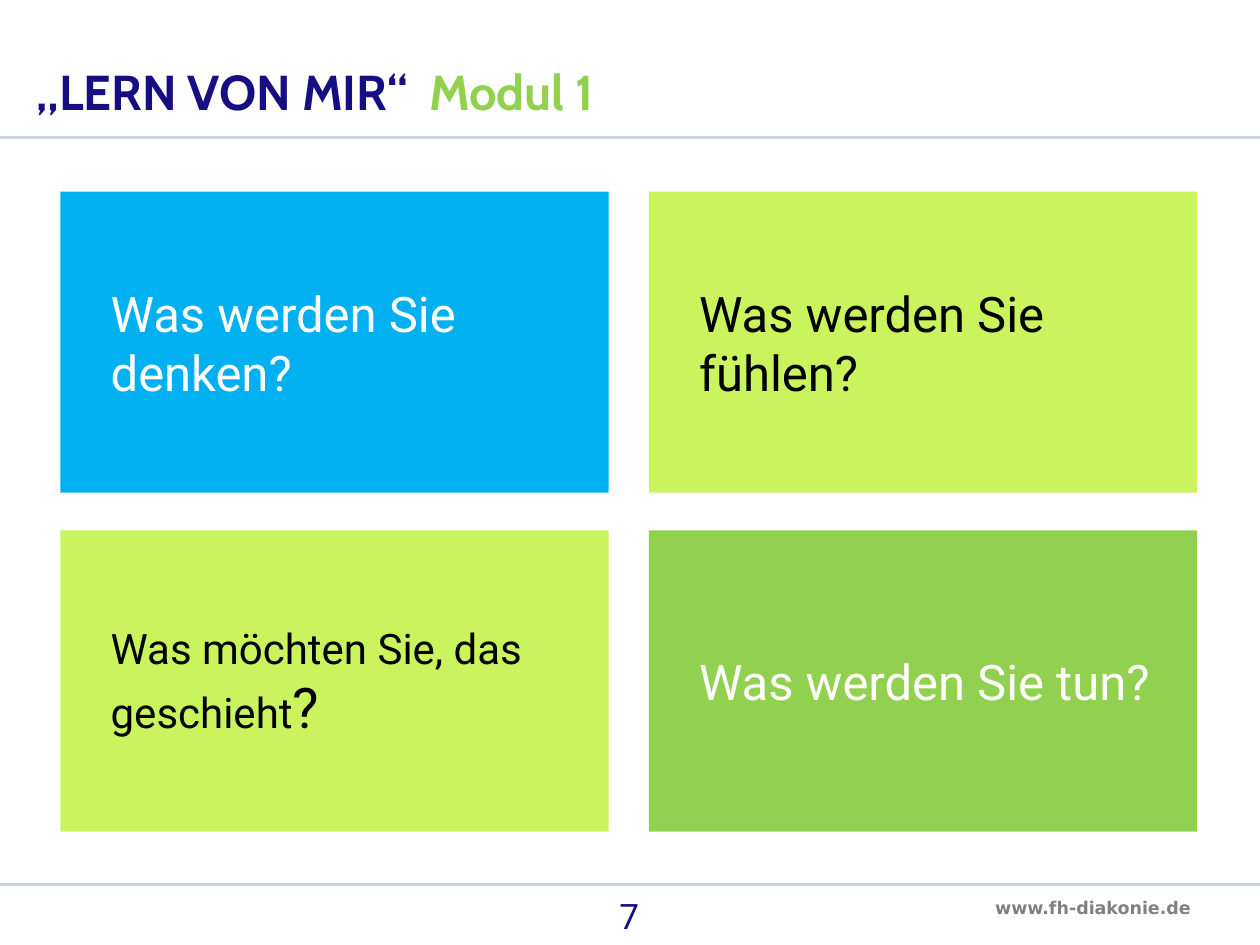
"""Build the module 1 slide with four question cards in a two by two grid."""
from typing import NamedTuple

import pptx
import pptx.dml.color
import pptx.enum.shapes
import pptx.enum.text
import pptx.oxml.ns
import pptx.util
from lxml import etree

Inches = pptx.util.Inches
Anchor = pptx.enum.text.MSO_ANCHOR
Align = pptx.enum.text.PP_ALIGN

NAVY, GREEN, LIME, BLUE = "170E83", "92D050", "C9F45E", "00B0F0"
WHITE, BLACK, GREY, RULE = "FFFFFF", "000000", "808080", "C8D2DC"
LEFT, TOP, WIDTH, HEIGHT = 0.48, 1.52, 4.35, 2.39
COLUMN_STEP, ROW_STEP = 4.67, 2.69


class Span(NamedTuple):
    text: str
    size: float
    color: str
    font: str = "Roboto"
    bold: bool = False
    tracking: int = 0


class Card(NamedTuple):
    fill: str
    spans: list[Span]


CARDS = [
    Card(BLUE, [Span("Was werden Sie denken?", 28, WHITE)]),
    Card(LIME, [Span("Was werden Sie fühlen?", 28, BLACK)]),
    Card(LIME, [Span("Was möchten Sie, das geschieht", 24, BLACK), Span("?", 32, BLACK)]),
    Card(GREEN, [Span("Was werden Sie tun?", 28, WHITE)]),
]
TITLE = [
    Span("„LERN VON MIR“", 28, NAVY, "Cabin", True),
    Span(" ", 28, NAVY, "Cabin", True, 600),
    Span("Modul 1", 28, GREEN, "Cabin", True),
]


def rgb(color: str) -> pptx.dml.color.RGBColor:
    return pptx.dml.color.RGBColor.from_string(color)


def write(shape, spans: list[Span], align=Align.LEFT, anchor=Anchor.TOP, wrap: bool = True):
    frame = shape.text_frame
    frame.word_wrap = wrap
    frame.vertical_anchor = anchor
    para = frame.paragraphs[0]
    para.alignment = align
    para.space_before = pptx.util.Pt(0)
    for span in spans:
        run = para.add_run()
        run.text = span.text
        run.font.name = span.font
        run.font.size = pptx.util.Pt(span.size)
        run.font.bold = span.bold
        run.font.color.rgb = rgb(span.color)
        if span.tracking:
            run.font._element.set("spc", str(span.tracking))
    return para


def add_title(slide) -> None:
    title = slide.shapes.title
    title.left, title.top = Inches(0.19), Inches(0.43)
    title.width, title.height = Inches(6.67), Inches(0.58)
    title.text_frame.auto_size = pptx.enum.text.MSO_AUTO_SIZE.NONE
    para = write(title, TITLE, anchor=Anchor.BOTTOM)
    para.line_spacing = 0.9


def add_rule(slide, y: float) -> None:
    rule = slide.shapes.add_connector(
        pptx.enum.shapes.MSO_CONNECTOR.STRAIGHT, 0, Inches(y), Inches(10), Inches(y)
    )
    rule.line.color.rgb = rgb(RULE)
    rule.line.width = pptx.util.Pt(1.5)
    etree.SubElement(rule._element.spPr, pptx.oxml.ns.qn("a:effectLst"))


def add_card(slide, card: Card, row: int, column: int) -> None:
    shape = slide.shapes.add_shape(
        pptx.enum.shapes.MSO_SHAPE.ROUNDED_RECTANGLE,
        Inches(LEFT + column * COLUMN_STEP),
        Inches(TOP + row * ROW_STEP),
        Inches(WIDTH),
        Inches(HEIGHT),
    )
    shape.adjustments[0] = 0
    shape.shadow.inherit = False
    shape.fill.solid()
    shape.fill.fore_color.rgb = rgb(card.fill)
    shape.line.fill.background()
    para = write(shape, card.spans, anchor=Anchor.MIDDLE)
    para.space_after = pptx.util.Pt(6)
    para._p.get_or_add_pPr().set("marL", str(Inches(0.3)))


def add_footer(slide) -> None:
    address = slide.shapes.add_textbox(Inches(7.8), Inches(7.07), Inches(1.78), Inches(0.27))
    write(address, [Span("www.fh-diakonie.de", 10, GREY, "DejaVu Sans", True)], wrap=False)
    number = slide.shapes.add_textbox(Inches(3.83), Inches(7.05), Inches(2.33), Inches(0.45))
    write(number, [Span("7", 20, NAVY)], align=Align.CENTER)


def main() -> None:
    deck = pptx.Presentation()
    deck.slide_width, deck.slide_height = Inches(10), Inches(7.5)
    slide = deck.slides.add_slide(deck.slide_layouts[5])
    for y in (1.09, 7.02):
        add_rule(slide, y)
    add_title(slide)
    for index, card in enumerate(CARDS):
        add_card(slide, card, *divmod(index, 2))
    add_footer(slide)
    deck.save("out.pptx")


if __name__ == "__main__":
    main()
